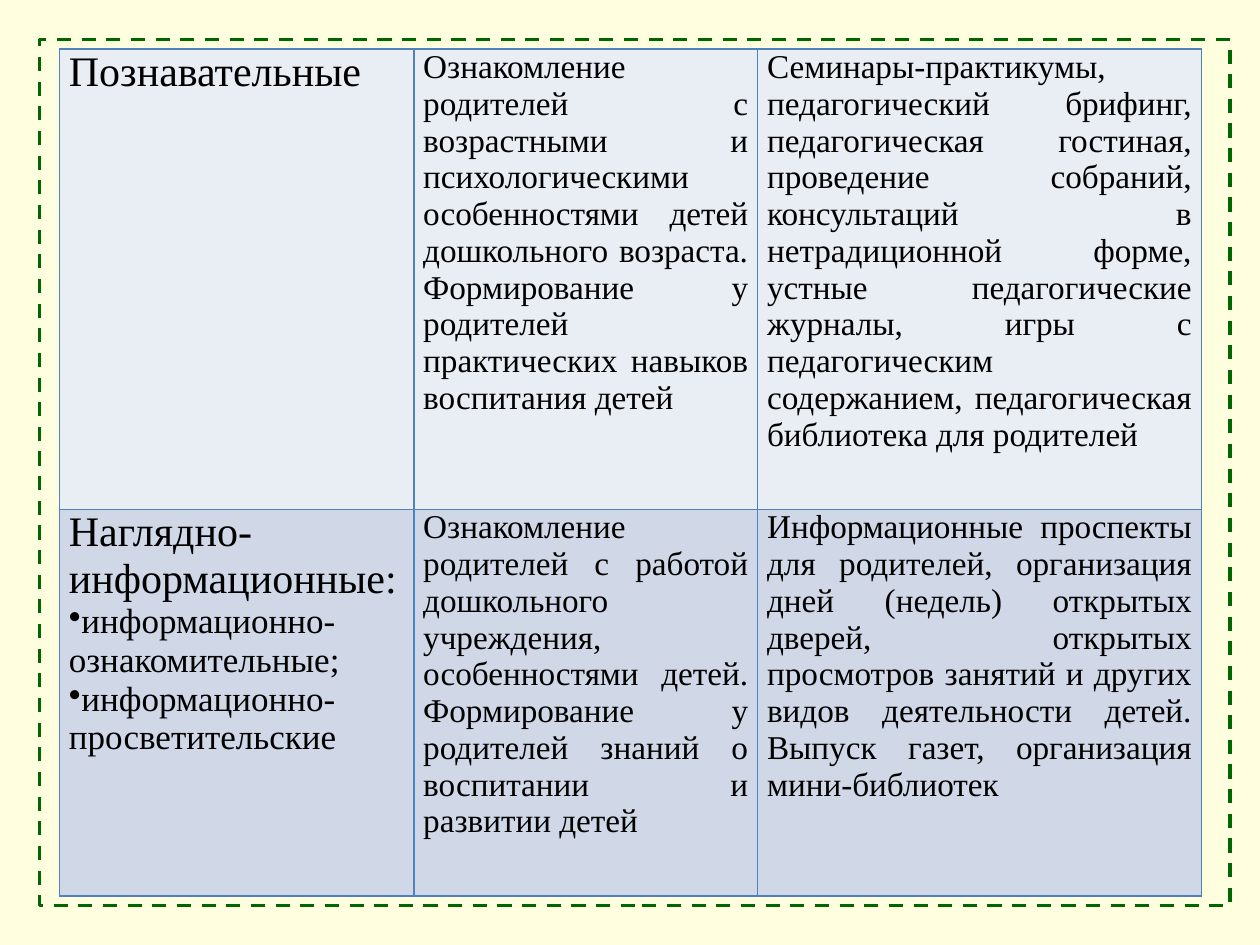
from dataclasses import dataclass

from lxml import etree
from pptx import Presentation
from pptx.dml.color import RGBColor
from pptx.enum import dml, shapes, text
from pptx.oxml import ns
from pptx.util import Pt


@dataclass(frozen=True)
class Theme:
    font: str = "Times New Roman"
    ink: str = "000000"
    background: str = "FFFFE0"
    frame: str = "006600"
    border: str = "4F81BD"
    bands: tuple = ("E9EDF4", "D0D8E8")
    heading: int = 24
    item: int = 20
    body: int = 19


THEME = Theme()
COLUMN_WIDTHS = (202.5, 196.5, 253.5)
ROW_HEIGHTS = (263, 221)

# Each row: heading, bulleted items, purpose, forms of work
ROWS = (
    (
        "Познавательные",
        (),
        "Ознакомление родителей с возрастными и психологическими особенностями "
        "детей дошкольного возраста. Формирование у родителей практических "
        "навыков воспитания детей",
        "Семинары-практикумы, педагогический брифинг, педагогическая гостиная, "
        "проведение собраний, консультаций в нетрадиционной форме, устные "
        "педагогические журналы, игры с педагогическим содержанием, "
        "педагогическая библиотека для родителей",
    ),
    (
        "Наглядно-информационные:",
        ("информационно-ознакомительные;", "информационно-просветительские"),
        "Ознакомление родителей с работой дошкольного учреждения, особенностями "
        "детей. Формирование у родителей знаний о воспитании и развитии детей",
        "Информационные проспекты для родителей, организация дней (недель) "
        "открытых дверей, открытых просмотров занятий и других видов "
        "деятельности детей. Выпуск газет, организация мини-библиотек",
    ),
)


def rgb(value):
    return RGBColor.from_string(value)


def write_paragraph(p, content, size, bullet=False):
    p.text = content
    p.alignment = text.PP_ALIGN.JUSTIFY
    for r in p.runs:
        r.font.name = THEME.font
        r.font.size = Pt(size)
        r.font.color.rgb = rgb(THEME.ink)
    if bullet:
        etree.SubElement(p._p.get_or_add_pPr(), ns.qn("a:buChar"), char="•")


def set_borders(cell):
    """Draw the four cell borders; they must precede the fill in the XML."""
    props = cell._tc.get_or_add_tcPr()
    for i, side in enumerate(("lnL", "lnR", "lnT", "lnB")):
        line = etree.Element(ns.qn(f"a:{side}"), w=str(Pt(1)))
        fill = etree.SubElement(line, ns.qn("a:solidFill"))
        etree.SubElement(fill, ns.qn("a:srgbClr"), val=THEME.border)
        props.insert(i, line)


def format_cell(cell, band):
    cell.margin_left = cell.margin_right = Pt(5.4)
    cell.margin_top = cell.margin_bottom = 0
    cell.fill.solid()
    cell.fill.fore_color.rgb = rgb(band)
    set_borders(cell)


def add_forms_table(s):
    table = s.shapes.add_table(
        len(ROWS), len(COLUMN_WIDTHS), Pt(34), Pt(28),
        Pt(sum(COLUMN_WIDTHS)), Pt(sum(ROW_HEIGHTS)),
    ).table
    table.first_row = table.horz_banding = False
    for column, width in zip(table.columns, COLUMN_WIDTHS):
        column.width = Pt(width)
    for row, height, band, content in zip(table.rows, ROW_HEIGHTS, THEME.bands, ROWS):
        row.height = Pt(height)
        heading, items, *descriptions = content
        kind, *others = row.cells
        write_paragraph(kind.text_frame.paragraphs[0], heading, THEME.heading)
        for item in items:
            write_paragraph(kind.text_frame.add_paragraph(), item, THEME.item, bullet=True)
        for cell, description in zip(others, descriptions):
            write_paragraph(cell.text_frame.paragraphs[0], description, THEME.body)
        for cell in row.cells:
            format_cell(cell, band)


def add_dashed_frame(s):
    sp = s.shapes.add_shape(
        shapes.MSO_SHAPE.RECTANGLE, Pt(22.5), Pt(22.5), Pt(680.5), Pt(495)
    )
    sp.shadow.inherit = False
    sp.fill.background()
    sp.line.color.rgb = rgb(THEME.frame)
    sp.line.width = Pt(2)
    sp.line.dash_style = dml.MSO_LINE.DASH


def main():
    prs = Presentation()
    prs.slide_width, prs.slide_height = Pt(720), Pt(540)
    s = prs.slides.add_slide(prs.slide_layouts[6])
    s.background.fill.solid()
    s.background.fill.fore_color.rgb = rgb(THEME.background)
    add_forms_table(s)
    add_dashed_frame(s)
    prs.save("out.pptx")


if __name__ == "__main__":
    main()
